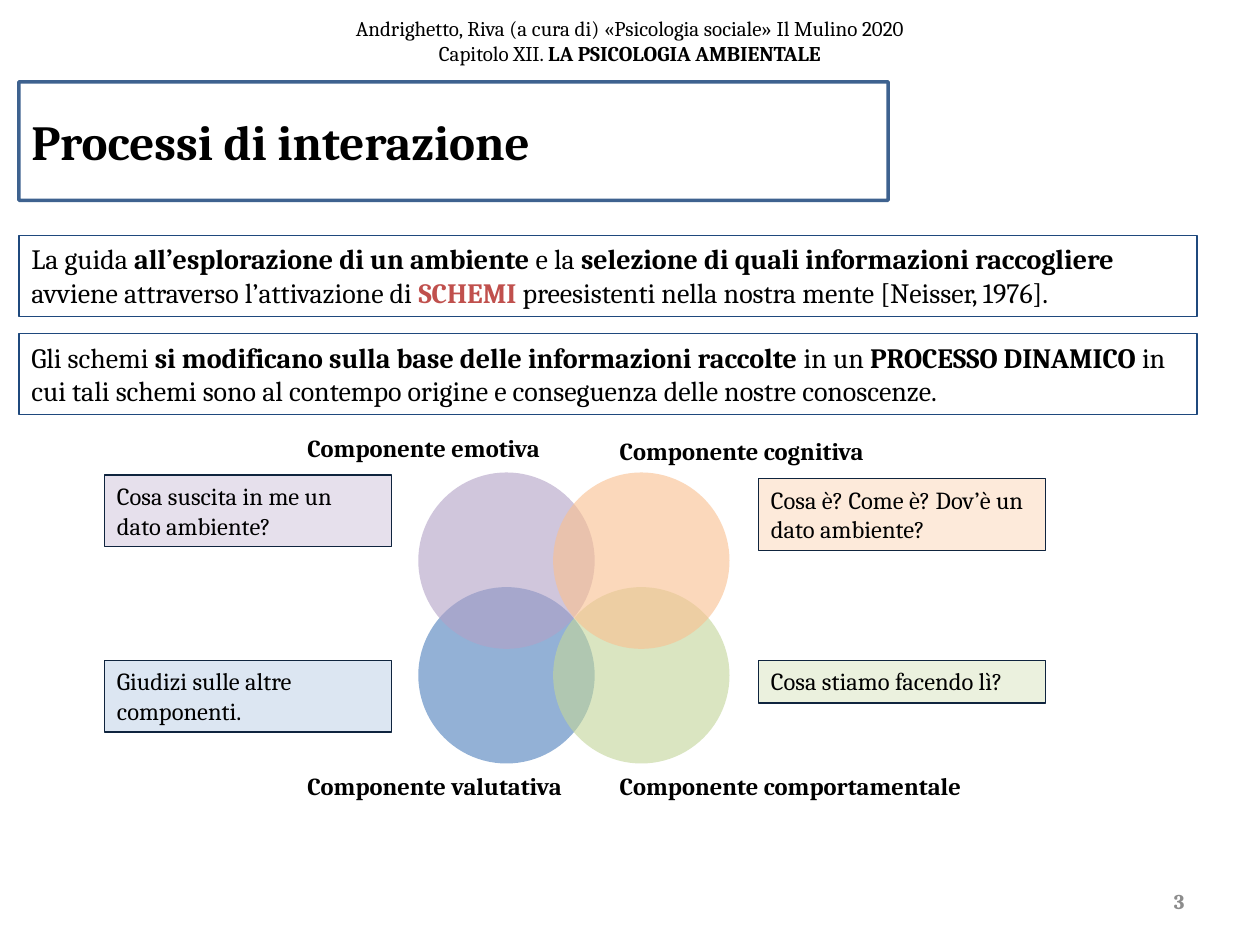
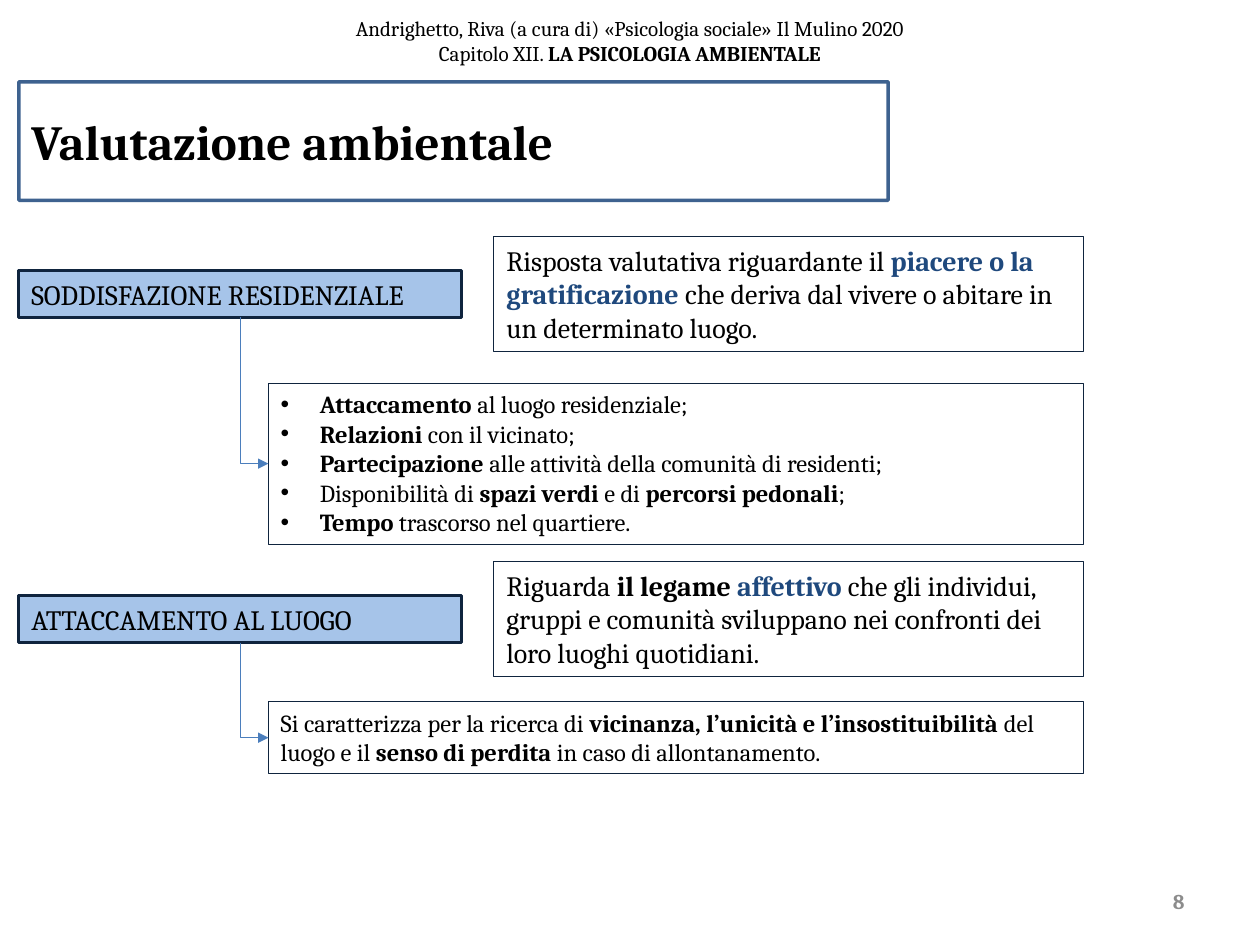
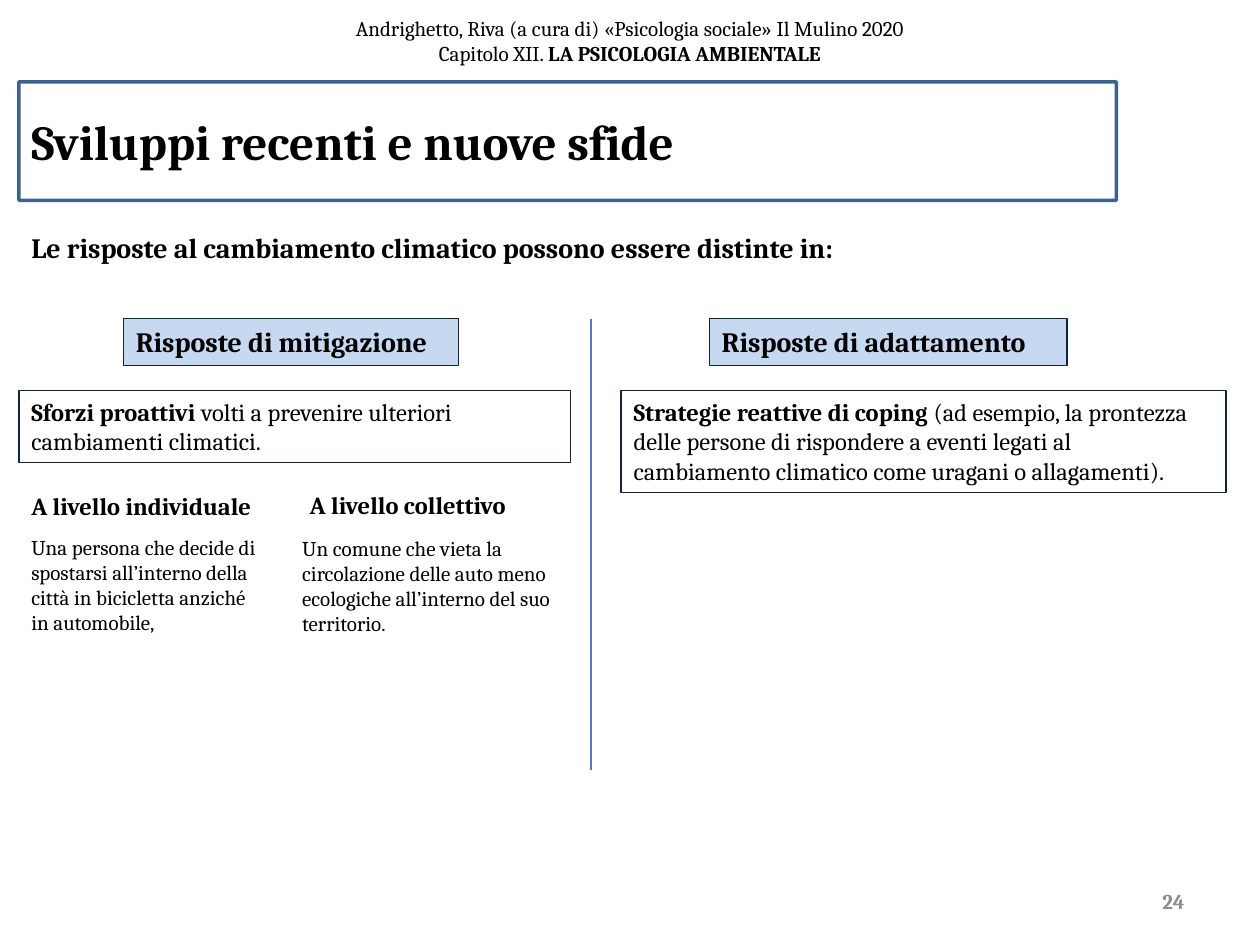
import pptx
import pptx.util
import pptx.dml.color
import pptx.enum.shapes
import pptx.enum.text
import pptx.oxml.ns
from lxml import etree


class Theme:
    font = "Cambria"
    ink, grey = "000000", "8C8C8C"
    navy, midnight, wire, red = "1F497D", "0F243E", "4B7EBC", "C0504D"
    label, tag = "8EB4E3", "C6D9F1"
    circles = ["4F81BD", "C3D69B", "B3A2C7", "FAC090"]
    tints = ["DCE6F2", "EBF1DE", "E6E0EC", "FDEADA"]
    title, lead, body, small = 28, 16, 14, 12
    hair, thin, heavy, frame = 0.5, 0.75, 1.75, 2


qn = pptx.oxml.ns.qn
rgb = pptx.dml.color.RGBColor.from_string
PP = pptx.enum.text.PP_ALIGN
MSO = pptx.enum.text.MSO_ANCHOR
SHAPE = pptx.enum.shapes.MSO_SHAPE
STRAIGHT = pptx.enum.shapes.MSO_CONNECTOR.STRAIGHT

prs = pptx.Presentation()
prs.slide_width = pptx.util.Inches(10)
prs.slide_height = pptx.util.Inches(7.5)
COL = prs.slide_width / 100
ROW = prs.slide_height / 75
LEFT = 1.5


def put(s, text, x, y, w, h, size=Theme.body, bold=False, color=Theme.ink, accent=Theme.navy,
        fill=None, line=None, width=Theme.thin, alpha=None, shape=SHAPE.RECTANGLE,
        align=PP.LEFT, anchor=MSO.TOP, bullet=False):
    box = [int(x * COL), int(y * ROW), int(w * COL), int(h * ROW)]
    if fill or line:
        sp = s.shapes.add_shape(shape, *box)
        sp.shadow.inherit = False
        sp.fill.background()
        sp.line.fill.background()
    else:
        sp = s.shapes.add_textbox(*box)
    if fill:
        sp.fill.solid()
        sp.fill.fore_color.rgb = rgb(fill)
    if line:
        sp.line.color.rgb = rgb(line)
        sp.line.width = pptx.util.Pt(width)
    if alpha:
        clr = next(sp._element.spPr.iter(qn("a:srgbClr")))
        etree.SubElement(clr, qn("a:alpha"), val=str(alpha * 1000))
    tf = sp.text_frame
    tf.word_wrap = True
    tf.vertical_anchor = anchor
    for i, row in enumerate(text.split("\n")):
        p = tf.add_paragraph() if i else tf.paragraphs[0]
        p.alignment = align
        if bullet:
            pPr = p._p.get_or_add_pPr()
            pPr.set("marL", str(int(3.1 * COL)))
            pPr.set("indent", str(int(-3.1 * COL)))
            etree.SubElement(pPr, qn("a:buFont"), typeface="Arial")
            etree.SubElement(pPr, qn("a:buChar"), char="•")
        for j, part in enumerate(row.split("*")):
            if part:
                r = p.add_run()
                r.text = part.lstrip("^")
                r.font.name = Theme.font
                r.font.size = pptx.util.Pt(size)
                r.font.bold = bold or j % 2 == 1
                r.font.color.rgb = rgb(accent if part.startswith("^") else color)
    return sp


def connect(s, x1, y1, x2, y2):
    c = s.shapes.add_connector(STRAIGHT, int(x1 * COL), int(y1 * ROW), int(x2 * COL), int(y2 * ROW))
    c.line.color.rgb = rgb(Theme.wire)
    c.line.width = pptx.util.Pt(Theme.thin)
    etree.SubElement(c._element.spPr, qn("a:effectLst"))
    return c


slides = []
for title, number, width in [("Processi di interazione", "3", 69),
                             ("Valutazione ambientale", "8", 69),
                             ("Sviluppi recenti e nuove sfide", "24", 87.1)]:
    s = prs.slides.add_slide(prs.slide_layouts[6])
    put(s, "Andrighetto, Riva (a cura di) «Psicologia sociale» Il Mulino 2020\n"
        "Capitolo XII. *LA PSICOLOGIA AMBIENTALE*", 0, -1.1, 100, 8.7,
        size=Theme.small, align=PP.CENTER, anchor=MSO.MIDDLE)
    put(s, number, 71.7, 69.5, 23.3, 4, size=Theme.small, bold=True, color=Theme.grey,
        align=PP.RIGHT, anchor=MSO.MIDDLE)
    put(s, title, LEFT, 6.5, width, 9.4, size=Theme.title, bold=True, line=Theme.navy,
        width=Theme.frame, alpha=86, anchor=MSO.MIDDLE)
    slides.append(s)
processes, evaluation, challenges = slides

s = processes
for i, text in enumerate([
        "La guida *all’esplorazione di un ambiente *e la *selezione di quali informazioni raccogliere *"
        "avviene attraverso l’attivazione di *^SCHEMI* preesistenti nella nostra mente [Neisser, 1976].",
        "Gli schemi *si modificano sulla base delle informazioni raccolte *in un *PROCESSO DINAMICO *"
        "in cui tali schemi sono al contempo origine e conseguenza delle nostre conoscenze."]):
    put(s, text, LEFT, 18.7 + 7.8 * i, 93.5, 6.4, size=Theme.lead, accent=Theme.red, line=Theme.navy)

for i, color in enumerate(Theme.circles):
    put(s, "", 33.2 + 10.7 * (i % 2), 46.6 - 9.1 * (i // 2), 14, 14,
        fill=color, alpha=61, shape=SHAPE.OVAL)

components = [("Componente valutativa", 60.7, "Giudizi sulle altre componenti.", 52.4, 5.7),
              ("Componente comportamentale", 60.7, "Cosa stiamo facendo lì?", 52.4, 3.4),
              ("Componente emotiva", 33.9, "Cosa suscita in me un dato ambiente?", 37.7, 5.7),
              ("Componente cognitiva", 34.1, "Cosa è? Come è? Dov’è un dato ambiente?", 38, 5.7)]
for i, (name, name_y, question, y, h) in enumerate(components):
    put(s, name, 23.4 + 24.8 * (i % 2), name_y, 30.1, 3.4, bold=True)
    put(s, question, 8.3 + 51.9 * (i % 2), y, 22.8, h, fill=Theme.tints[i], line=Theme.midnight)

s = evaluation
concepts = [
    ("SODDISFAZIONE RESIDENZIALE", 18.8,
     "Risposta valutativa riguardante il *^piacere o la gratificazione *"
     "che deriva dal vivere o abitare in un determinato luogo.",
     30.4, 12.8, True,
     "*Attaccamento* al luogo residenziale;\n*Relazioni* con il vicinato;\n"
     "*Partecipazione* alle attività della comunità di residenti;\n"
     "Disponibilità di *spazi verdi *e di *percorsi pedonali*;\n*Tempo* trascorso nel quartiere."),
    ("ATTACCAMENTO AL LUOGO", 44.6,
     "Riguarda *il legame **^affettivo *che gli individui, gruppi e comunità sviluppano "
     "nei confronti dei loro luoghi quotidiani.",
     55.7, 5.7, False,
     "Si caratterizza per la ricerca di *vicinanza, l’unicità e l’insostituibilità *del luogo "
     "e il *senso di perdita *in caso di allontanamento.")]
for name, y, definition, detail_y, detail_h, bullet, detail in concepts:
    put(s, definition, 39.2, y, 46.8, 9.1, size=Theme.lead, line=Theme.midnight, width=Theme.hair)
    put(s, name, LEFT, y + 2.7, 35.1, 3.7, size=Theme.lead, fill=Theme.label, alpha=78,
        line=Theme.midnight, width=Theme.heavy)
    put(s, detail, 21.3, detail_y, 64.7, detail_h, line=Theme.midnight, width=Theme.hair, bullet=bullet)
    top, bottom = y + 6.4, detail_y + detail_h / 2
    cx, cy, run, drop = 20.2, (top + bottom) / 2, 2.2, bottom - top
    c = connect(s, cx + drop / 2, cy - run / 2, cx - drop / 2, cy + run / 2)
    c._element.spPr.find(qn("a:xfrm")).set("rot", str(270 * 60000))
    c._element.spPr.find(qn("a:prstGeom")).set("prst", "bentConnector2")
    etree.SubElement(c.line._get_or_add_ln(), qn("a:tailEnd"), type="triangle")

s = challenges
put(s, "Le risposte al cambiamento climatico possono essere distinte in:",
    LEFT, 17.8, 93.5, 3.7, size=Theme.lead, bold=True)
connect(s, 46.9, 25.3, 46.9, 61.1)
responses = [
    ("Risposte di mitigazione", 9.8, 26.6, LEFT, 43.8, 5.7,
     "*Sforzi proattivi *volti a prevenire ulteriori cambiamenti climatici."),
    ("Risposte di adattamento", 56.3, 28.4, 49.3, 48, 8.1,
     "*Strategie reattive di coping *(ad esempio, la prontezza delle persone di rispondere a eventi "
     "legati al cambiamento climatico come uragani o allagamenti).")]
for name, name_x, name_w, x, w, h, text in responses:
    put(s, name, name_x, 25.3, name_w, 3.7, size=Theme.lead, bold=True, fill=Theme.tag, line=Theme.midnight)
    put(s, text, x, 31, w, h, line=Theme.midnight)

levels = [
    ("A livello individuale", LEFT, 38.5, LEFT, 41.9, 19.9,
     "Una persona che decide di spostarsi all’interno della città in bicicletta anziché in automobile,"),
    ("A livello collettivo", 23.6, 38.4, 23, 42, 22.3,
     "Un comune che vieta la circolazione delle auto meno ecologiche all’interno del suo territorio.")]
for name, name_x, name_y, x, y, w, text in levels:
    put(s, name, name_x, name_y, 19.9, 3.4, bold=True)
    put(s, text, x, y, w, 9.1, size=Theme.small)

prs.save("out.pptx")
